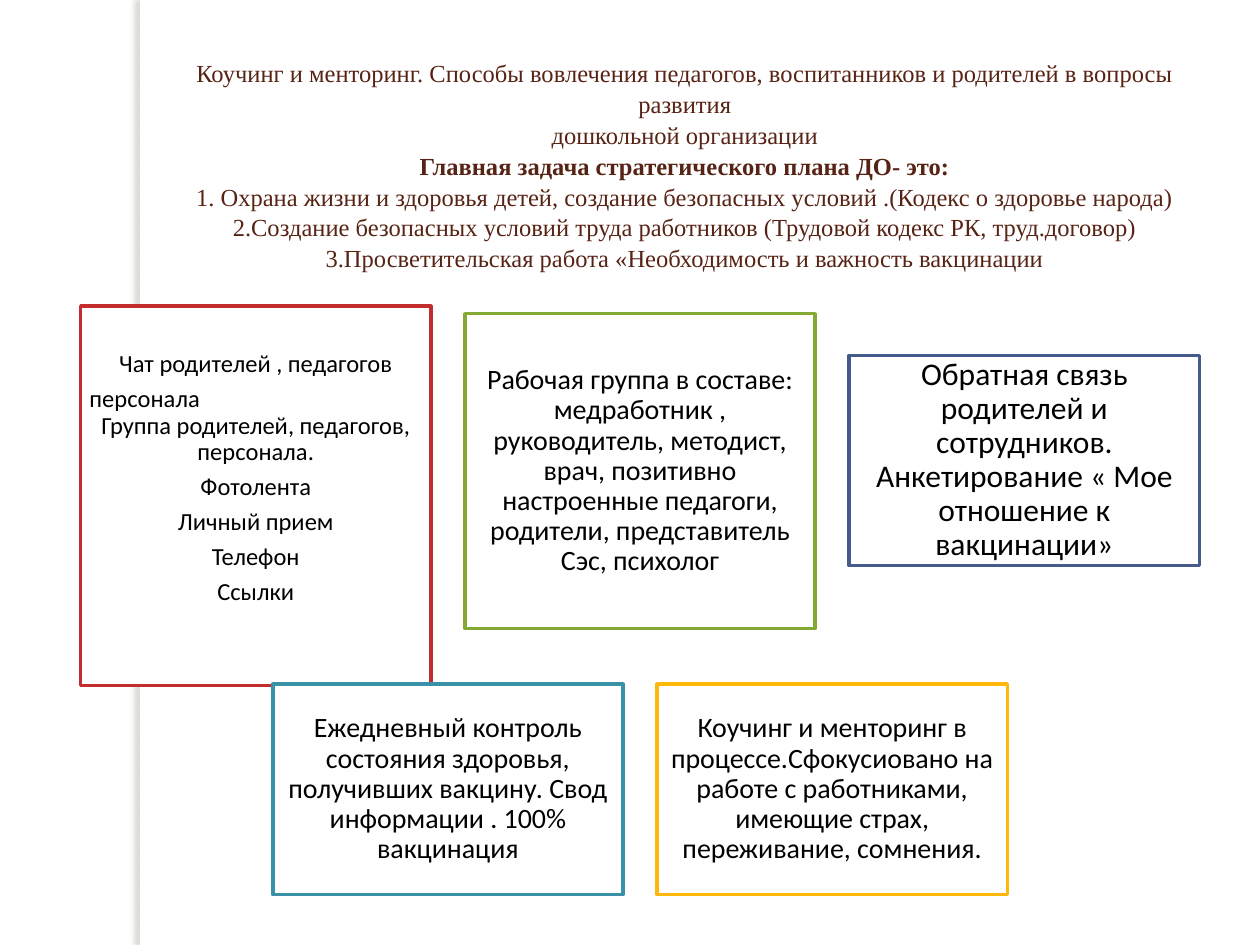
from dataclasses import dataclass

import pptx
import pptx.dml.color
import pptx.enum.shapes
import pptx.enum.text
import pptx.oxml
import pptx.oxml.ns
import pptx.util
from pptx.util import Inches

ALIGN = pptx.enum.text.PP_ALIGN


@dataclass(frozen=True)
class Theme:
    title_font: str = "Times New Roman"
    body_font: str = "Calibri"
    title_size: int = 14
    small_size: int = 14
    medium_size: int = 16
    large_size: int = 18
    title_color: str = "572314"
    text_color: str = "000000"
    paper: str = "FFFFFF"
    shadow: str = "736F63"
    red: str = "C32D2E"
    green: str = "84AA33"
    navy: str = "475A8D"
    teal: str = "3891A7"
    amber: str = "FEB80A"


@dataclass(frozen=True)
class Line:
    text: str
    align: ALIGN = ALIGN.CENTER
    gap_after: float = 0.35  # share of the type size


@dataclass(frozen=True)
class Measure:
    column: float  # card columns; half steps are allowed
    top: float
    height: float
    color: str
    size: int
    lines: tuple[Line, ...]
    bottom_inset: float = 0.07


THEME = Theme()
GRID_LEFT, COLUMN_STEP, CARD_WIDTH = 0.64, 3.05, 2.78
LOWER_TOP, CARD_HEIGHT = 5.43, 1.67

HEADING = (
    ("Коучинг и менторинг. Способы вовлечения педагогов, воспитанников "
     "и родителей в вопросы развития", False),
    ("дошкольной организации", False),
    ("Главная задача стратегического плана ДО- это:", True),
    ("1. Охрана жизни и здоровья детей, создание безопасных условий "
     ".(Кодекс о здоровье народа)", False),
    ("2.Создание безопасных условий труда работников "
     "(Трудовой кодекс РК, труд.договор)", False),
    ("3.Просветительская работа «Необходимость и важность вакцинации", False),
)

MEASURES = (
    Measure(0, 2.43, 3.01, THEME.red, THEME.small_size, (
        Line("Чат родителей , педагогов"),
        Line("персонала", ALIGN.LEFT, 0),
        Line("Группа родителей, педагогов, персонала."),
        Line("Фотолента"),
        Line("Личный прием"),
        Line("Телефон"),
        Line("Ссылки"),
    ), bottom_inset=0.34),
    Measure(1, 2.49, 2.5, THEME.green, THEME.medium_size, (
        Line("Рабочая группа в составе: медработник , руководитель, методист, "
             "врач, позитивно настроенные педагоги, родители, "
             "представитель Сэс, психолог"),
    )),
    Measure(2, 2.82, CARD_HEIGHT, THEME.navy, THEME.large_size, (
        Line("Обратная связь родителей и сотрудников. "
             "Анкетирование « Мое отношение к вакцинации»"),
    )),
    Measure(0.5, LOWER_TOP, CARD_HEIGHT, THEME.teal, THEME.medium_size, (
        Line("Ежедневный контроль состояния здоровья, получивших вакцину. "
             "Свод информации . 100% вакцинация"),
    )),
    Measure(1.5, LOWER_TOP, CARD_HEIGHT, THEME.amber, THEME.medium_size, (
        Line("Коучинг и менторинг в процессе.Сфокусиовано на работе "
             "с работниками, имеющие страх, переживание, сомнения."),
    )),
)


def rgb(value: str) -> pptx.dml.color.RGBColor:
    return pptx.dml.color.RGBColor.from_string(value)


def add_run(paragraph, text: str, font: str, size: int, color: str,
            bold: bool = False) -> None:
    run = paragraph.add_run()
    run.text = text
    run.font.name = font
    run.font.size = pptx.util.Pt(size)
    run.font.bold = bold
    run.font.color.rgb = rgb(color)


def add_panel(slide, left: float, top: float, width: float, height: float):
    """Add a plain paper-coloured rectangle without line or shadow."""
    panel = slide.shapes.add_shape(
        pptx.enum.shapes.MSO_SHAPE.RECTANGLE,
        Inches(left), Inches(top), Inches(width), Inches(height))
    panel.shadow.inherit = False
    panel.fill.solid()
    panel.fill.fore_color.rgb = rgb(THEME.paper)
    panel.line.fill.background()
    return panel


def add_side_edge(slide) -> None:
    """Add the page edge that casts a soft shadow to the left."""
    edge = add_panel(slide, 1.11, 0, 0.08, 7.5)
    effects = edge._element.spPr.find(pptx.oxml.ns.qn("a:effectLst"))
    effects.append(pptx.oxml.parse_xml(
        f'<a:outerShdw {pptx.oxml.ns.nsdecls("a")} blurRad="{pptx.util.Pt(3)}" '
        f'dist="{pptx.util.Pt(3)}" dir="10800000" algn="tl" rotWithShape="0">'
        f'<a:srgbClr val="{THEME.shadow}"><a:alpha val="25000"/></a:srgbClr>'
        '</a:outerShdw>'))


def fill_heading(slide) -> None:
    heading = slide.shapes.title
    heading.left, heading.top = Inches(1.38), Inches(0.4)
    heading.width, heading.height = Inches(8.11), Inches(1.2)
    frame = heading.text_frame
    frame.word_wrap = True
    frame.auto_size = pptx.enum.text.MSO_AUTO_SIZE.NONE
    frame.vertical_anchor = pptx.enum.text.MSO_ANCHOR.TOP
    for index, (text, bold) in enumerate(HEADING):
        paragraph = frame.add_paragraph() if index else frame.paragraphs[0]
        paragraph.alignment = ALIGN.CENTER
        paragraph.line_spacing = 1.05
        paragraph.space_before = pptx.util.Pt(0)
        add_run(paragraph, text, THEME.title_font, THEME.title_size,
                THEME.title_color, bold)


def add_measure(slide, measure: Measure) -> None:
    left = GRID_LEFT + measure.column * COLUMN_STEP
    card = add_panel(slide, left, measure.top, CARD_WIDTH, measure.height)
    card.line.color.rgb = rgb(measure.color)
    card.line.width = pptx.util.Pt(2)
    frame = card.text_frame
    frame.word_wrap = True
    frame.vertical_anchor = pptx.enum.text.MSO_ANCHOR.MIDDLE
    frame.margin_left = frame.margin_right = frame.margin_top = Inches(0.07)
    frame.margin_bottom = Inches(measure.bottom_inset)
    for index, line in enumerate(measure.lines):
        paragraph = frame.add_paragraph() if index else frame.paragraphs[0]
        paragraph.alignment = line.align
        paragraph.line_spacing = 0.9
        paragraph.space_after = pptx.util.Pt(line.gap_after * measure.size)
        add_run(paragraph, line.text, THEME.body_font, measure.size,
                THEME.text_color)


def main() -> None:
    deck = pptx.Presentation()
    deck.slide_width, deck.slide_height = Inches(10), Inches(7.5)
    slide = deck.slides.add_slide(deck.slide_layouts.get_by_name("Title Only"))
    add_side_edge(slide)
    fill_heading(slide)
    for measure in MEASURES:
        add_measure(slide, measure)
    deck.save("out.pptx")


if __name__ == "__main__":
    main()
